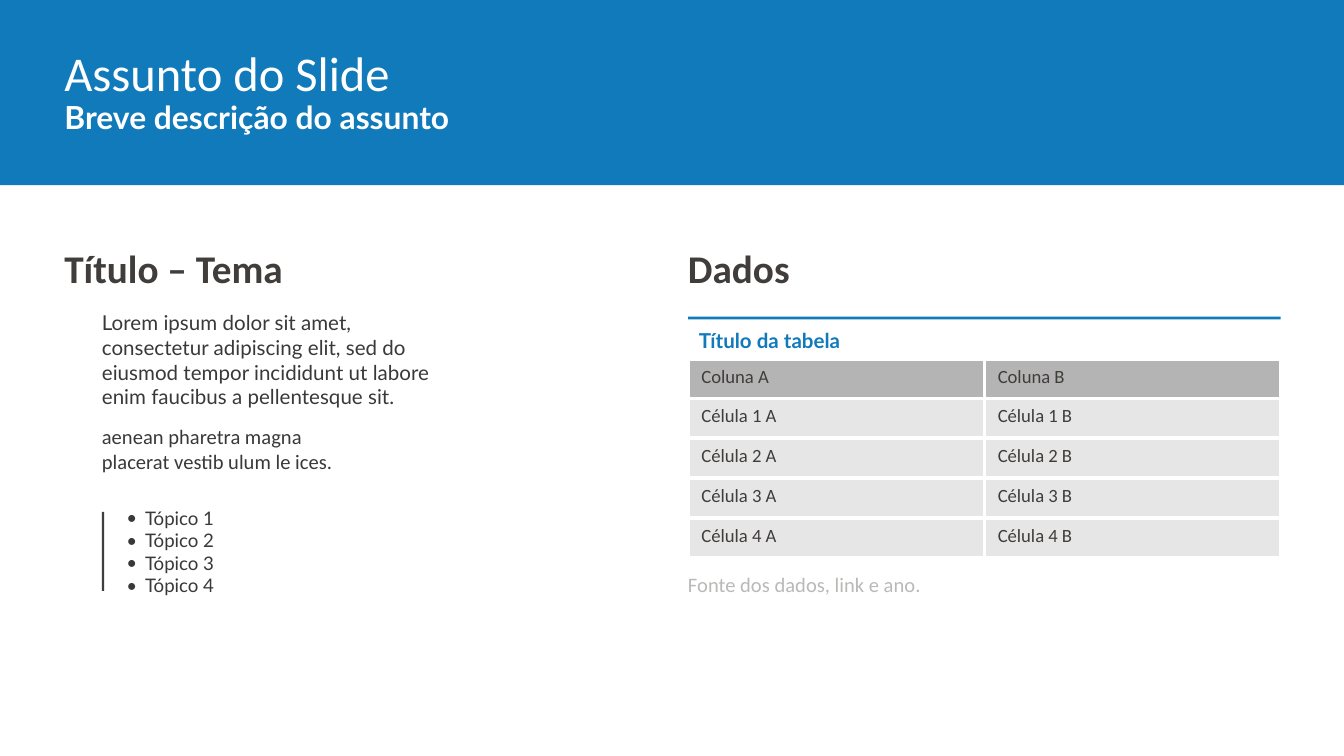
from lxml.etree import SubElement
from pptx import Presentation
from pptx.dml.color import RGBColor
from pptx.enum.shapes import MSO_SHAPE
from pptx.enum.text import MSO_ANCHOR, MSO_AUTO_SIZE, PP_ALIGN
from pptx.oxml.ns import qn
from pptx.util import Pt

BLUE, DARK, TEXT = "117ABA", "403D3B", "393939"
LEFT, RIGHT = 34.5, 368.6
COLUMN_WIDTH = 317.5


def paint(target, color):
    if hasattr(target, "solid"):
        target.solid()
        target = target.fore_color
    target.rgb = RGBColor.from_string(color)


def write(box, place, lines, size, font_names, color, bold=False, after=0):
    box.left, box.top, box.width, box.height = map(Pt, place)
    frame = box.text_frame
    frame.word_wrap = True
    frame.auto_size = MSO_AUTO_SIZE.NONE
    frame.vertical_anchor = MSO_ANCHOR.TOP
    frame.margin_left = frame.margin_right = frame.margin_top = frame.margin_bottom = 0
    frame.text = "\n".join(lines)
    for paragraph, font_name in zip(frame.paragraphs, font_names):
        paragraph.alignment = PP_ALIGN.LEFT
        paragraph.space_before = Pt(0)
        paragraph.space_after = Pt(after)
        if len(lines) == 4:
            properties = paragraph._p.get_or_add_pPr()
            properties.set("marL", str(Pt(10)))
            properties.set("indent", str(-Pt(10)))
            SubElement(properties, qn("a:buFont"), typeface="Lato")
            SubElement(properties, qn("a:buChar"), char="•")
        paragraph.font.name = font_name
        paragraph.font.size = Pt(size)
        paragraph.font.bold = bold
        paint(paragraph.font.fill, color)


deck = Presentation()
deck.slide_width, deck.slide_height = Pt(720), Pt(405)
page = deck.slides.add_slide(deck.slide_layouts[5])
title = page.shapes.title

bars = [
    ((0, 0, 720, 99.2), BLUE),
    ((RIGHT, 169.6, COLUMN_WIDTH, 1.6), BLUE),
    ((54.6, 274.2, 1.2, 42.4), DARK),
]
for place, color in bars:
    bar = page.shapes.add_shape(MSO_SHAPE.RECTANGLE, *map(Pt, place))
    bar.shadow.inherit = False
    paint(bar.fill, color)
    bar.line.fill.background()
    title.element.addprevious(bar.element)

write(title, (LEFT, 23, 241, 30.2), ["Assunto do Slide"], 26, ["Calibri"], "FFFFFF")

lorem = [
    "Lorem ipsum dolor sit amet, consectetur adipiscing elit, sed do "
    "eiusmod tempor incididunt ut labore enim faucibus a pellentesque sit.",
    "aenean pharetra magna\vplacerat vestib ulum le ices.",
]
topics = [f"Tópico {number}" for number in range(1, 5)]
texts = [
    ((LEFT, 52.6, 270, 33), ["Breve descrição do assunto"], 17, ["Lato"], "FFFFFF", True),
    ((LEFT, 131, 241, 24.5), ["Título – Tema"], 21, ["Calibri"], DARK, True),
    ((RIGHT, 131, 241, 24.5), ["Dados"], 21, ["Calibri"], DARK, True),
    ((54.6, 166.3, 190.8, 144), lorem, 11, ["Lato", "Calibri"], TEXT, False, 8),
    ((67.7, 271.4, 54, 50.4), topics, 10, ["Lato"] * 4, TEXT),
    ((374.4, 175.7, 170.6, 12.2), ["Título da tabela"], 11, ["Lato"], BLUE, True),
    ((RIGHT, 306.7, 170.6, 40.3), ["Fonte dos dados, link e ano."], 11, ["Calibri"], "BAB9B8"),
]
for place, *style in texts:
    write(page.shapes.add_textbox(0, 0, 0, 0), place, *style)

rows = [("Coluna A", "Coluna B")]
rows += [(f"Célula {number} A", f"Célula {number} B") for number in range(1, 5)]
table = page.shapes.add_table(
    len(rows), 2, Pt(RIGHT), Pt(192.2), Pt(COLUMN_WIDTH), Pt(106.5)
).table
for row_index, row in enumerate(rows):
    for column_index, words in enumerate(row):
        cell = table.cell(row_index, column_index)
        cell.text = words
        for side in ("lnL", "lnR", "lnT", "lnB"):
            border = SubElement(cell._tc.get_or_add_tcPr(), qn(f"a:{side}"), w=str(Pt(2.25)))
            border_fill = SubElement(border, qn("a:solidFill"))
            SubElement(border_fill, qn("a:srgbClr"), val="FFFFFF")
        paint(cell.fill, "E6E6E6" if row_index else "B4B4B4")
        paragraph = cell.text_frame.paragraphs[0]
        paragraph.font.name = "Calibri"
        paragraph.font.size = Pt(10)
        paragraph.font.bold = False
        paint(paragraph.font.fill, DARK)

deck.save("out.pptx")
